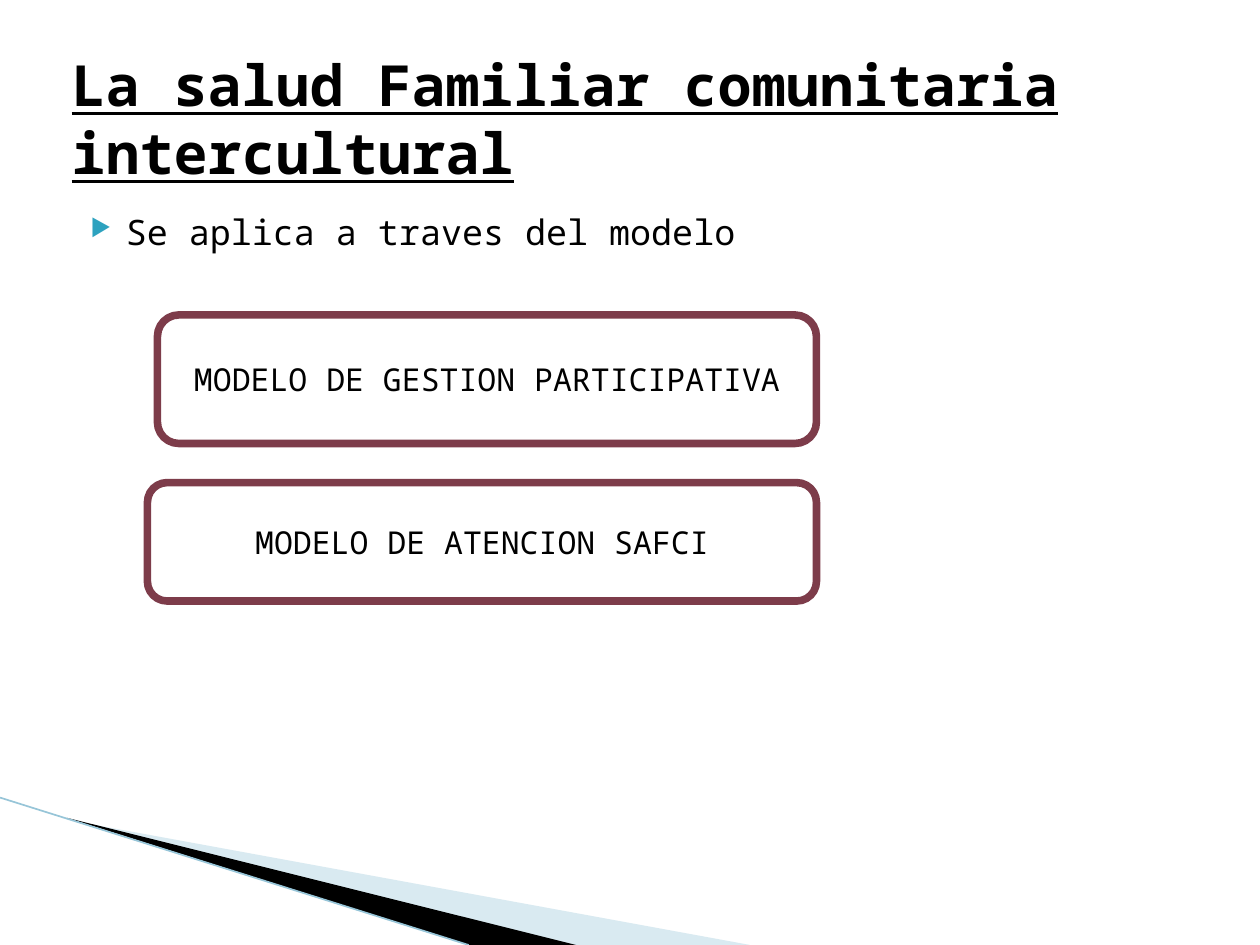
import lxml.etree
import pptx
import pptx.dml.color
import pptx.enum.shapes
import pptx.enum.text
import pptx.oxml
import pptx.oxml.ns
import pptx.util

RGBColor = pptx.dml.color.RGBColor
BLACK = RGBColor(0x00, 0x00, 0x00)
WHITE = RGBColor(0xFF, 0xFF, 0xFF)
MAROON = RGBColor(0x7D, 0x3C, 0x4A)
TEAL = RGBColor(0x2D, 0xA2, 0xBF)
LIGHT_BLUE = RGBColor(0xA0, 0xCB, 0xDC)
LINE_BLUE = RGBColor(0x97, 0xC5, 0xD8)

WIDTH = pptx.util.Inches(10)
HEIGHT = pptx.util.Inches(7.5)
FONT_NAME = "Noto Sans Mono"
ANCHOR = pptx.enum.text.MSO_ANCHOR
ALIGN = pptx.enum.text.PP_ALIGN

TITLE_BOX = (4.7, 4.13, 90, 16.67)
BODY_BOX = (5, 21.6, 90, 66)
WEDGE_BOX = (0, 84.4, 60, 15.6)
MODELS = [
    ("MODELO DE GESTION PARTICIPATIVA", (12.5, 33.33, 52.3, 13.6)),
    ("MODELO DE ATENCION SAFCI", (11.7, 51.07, 53.1, 12.53)),
]
WEDGES = [
    (LIGHT_BLUE, 40, [(9.17, 15.4), (99.2, 100), (76, 100)]),
    (BLACK, 100, [(8.83, 13.7), (76.2, 100), (62, 100)]),
]


def place(box):
    """Turn a box in percent of the slide into lengths."""
    left, top, width, height = box
    return [
        pptx.util.Emu(round(share * side / 100))
        for share, side in ((left, WIDTH), (top, HEIGHT), (width, WIDTH), (height, HEIGHT))
    ]


def write(shape, text, anchor, alignment, **font_format):
    """Write one formatted paragraph into a shape and return it."""
    frame = shape.text_frame
    frame.word_wrap = True
    frame.vertical_anchor = anchor
    paragraph = frame.paragraphs[0]
    paragraph.alignment = alignment
    run = paragraph.add_run()
    run.text = text
    run.font.color.rgb = BLACK
    for name, value in {"name": FONT_NAME, **font_format}.items():
        setattr(run.font, name, value)
    return paragraph


def add_wedges(slide, box):
    """Draw the decorative wedges and their edge line."""
    left, top, width, height = place(box)

    def locate(point):
        """Turn a point in percent of the box into slide lengths."""
        return round(left + width * point[0] / 100), round(top + height * point[1] / 100)

    for color, opacity, points in WEDGES:
        corners = [locate(point) for point in points]
        builder = slide.shapes.build_freeform(*corners[0])
        builder.add_line_segments(corners[1:], close=True)
        wedge = builder.convert_to_shape()
        wedge.shadow.inherit = False
        wedge.fill.solid()
        wedge.fill.fore_color.rgb = color
        wedge.line.fill.background()
        if opacity < 100:
            color_element = next(wedge.fill._xPr.iter(pptx.oxml.ns.qn("a:srgbClr")))
            alpha = lxml.etree.SubElement(color_element, pptx.oxml.ns.qn("a:alpha"))
            alpha.set("val", str(opacity * 1000))

    edge = slide.shapes.add_connector(
        pptx.enum.shapes.MSO_CONNECTOR.STRAIGHT, *locate((0, 0)), *locate((62, 100))
    )
    edge.line.color.rgb = LINE_BLUE
    edge.line.width = pptx.util.Pt(0.95)
    lxml.etree.SubElement(edge._element.spPr, pptx.oxml.ns.qn("a:effectLst"))


def add_title(slide, box):
    """Place the underlined title."""
    title = slide.shapes.add_textbox(*place(box))
    write(title, "La salud Familiar comunitaria intercultural", ANCHOR.MIDDLE, ALIGN.LEFT,
          size=pptx.util.Pt(32.4), bold=True, underline=True)


def add_body(slide, box):
    """Place the bulleted introduction."""
    body = slide.shapes.add_textbox(*place(box))
    paragraph = write(body, "Se aplica a traves del modelo", ANCHOR.TOP, ALIGN.LEFT,
                      size=pptx.util.Pt(20))
    properties = paragraph._p.get_or_add_pPr()
    properties.set("marL", str(pptx.util.Inches(0.4)))
    properties.set("indent", str(pptx.util.Inches(-0.28)))
    color = lxml.etree.SubElement(properties, pptx.oxml.ns.qn("a:buClr"))
    lxml.etree.SubElement(color, pptx.oxml.ns.qn("a:srgbClr")).set("val", str(TEAL))
    for tag, name, value in (("a:buSzPct", "val", "68000"), ("a:buChar", "char", "▶")):
        lxml.etree.SubElement(properties, pptx.oxml.ns.qn(tag)).set(name, value)


def add_model(slide, box, text):
    """Place one rounded model box."""
    model = slide.shapes.add_shape(
        pptx.enum.shapes.MSO_SHAPE.ROUNDED_RECTANGLE, *place(box)
    )
    model.shadow.inherit = False
    model.fill.solid()
    model.fill.fore_color.rgb = WHITE
    model.line.color.rgb = MAROON
    model.line.width = pptx.util.Pt(4.33)
    write(model, text, ANCHOR.MIDDLE, ALIGN.CENTER, size=pptx.util.Pt(18))


def main():
    """Build and save the slide."""
    presentation = pptx.Presentation()
    presentation.slide_width = WIDTH
    presentation.slide_height = HEIGHT
    slide = presentation.slides.add_slide(presentation.slide_layouts[6])
    add_wedges(slide, WEDGE_BOX)
    add_body(slide, BODY_BOX)
    add_title(slide, TITLE_BOX)
    for text, box in MODELS:
        add_model(slide, box, text)
    presentation.save("out.pptx")


if __name__ == "__main__":
    main()
